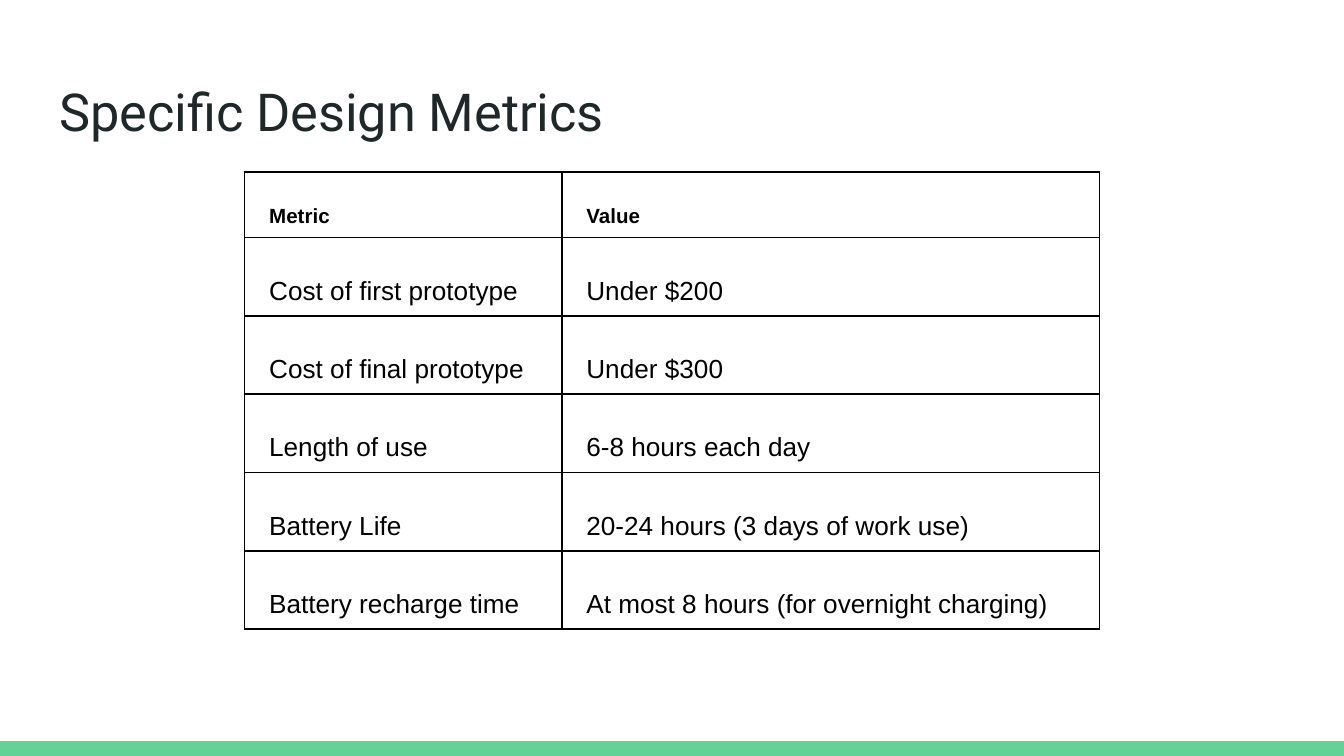
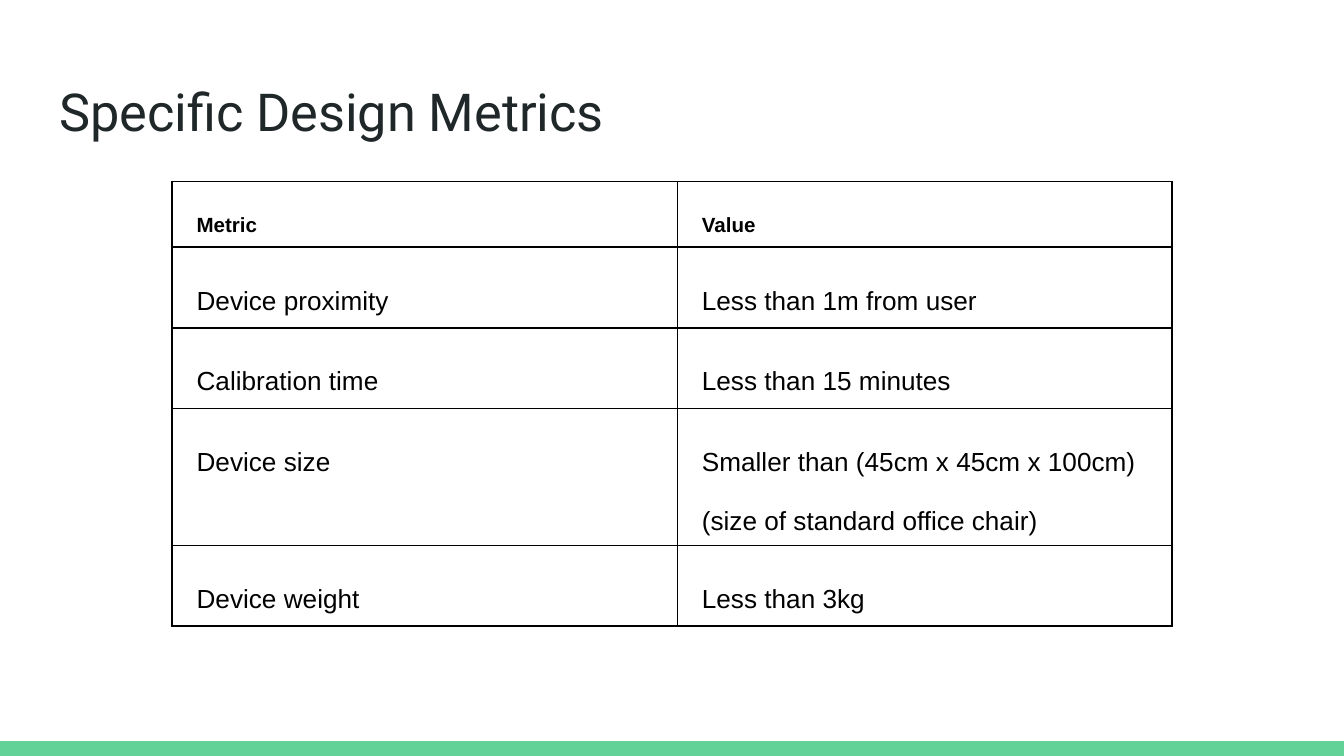
from lxml.etree import SubElement
from pptx import Presentation
from pptx.dml.color import RGBColor
from pptx.enum.shapes import MSO_SHAPE
from pptx.enum.text import MSO_ANCHOR, MSO_AUTO_SIZE, PP_ALIGN
from pptx.oxml import parse_xml
from pptx.oxml.ns import nsdecls, qn
from pptx.util import Inches, Pt

SLIDE_W = 10
SLIDE_H = SLIDE_W * 9 / 16
BAND_H = 0.11
MARGIN = 0.34
TITLE_BOX = (MARGIN, 0.49, SLIDE_W - 2 * MARGIN, 0.63)

GREEN = RGBColor(0x63, 0xD2, 0x97)
INK = RGBColor(0x20, 0x27, 0x29)
BLACK = RGBColor(0, 0, 0)
WHITE = RGBColor(0xFF, 0xFF, 0xFF)

TITLE = "Specific Design Metrics"
HEADINGS = ("Metric", "Value")
COST_AND_BATTERY = [
    ("Cost of first prototype", "Under $200"),
    ("Cost of final prototype", "Under $300"),
    ("Length of use", "6-8 hours each day"),
    ("Battery Life", "20-24 hours (3 days of work use)"),
    ("Battery recharge time", "At most 8 hours (for overnight charging)"),
]
DEVICE = [
    ("Device proximity", "Less than 1m from user"),
    ("Calibration time", "Less than 15 minutes"),
    ("Device size",
     "Smaller than (45cm x 45cm x 100cm)\n(size of standard office chair)"),
    ("Device weight", "Less than 3kg"),
]


def inches(box):
    return [Inches(length) for length in box]


def set_margins(area, margin):
    area.margin_left = area.margin_right = margin
    area.margin_top = area.margin_bottom = margin


def style_font(paragraph, name, size, color, bold=False):
    font = paragraph.font
    font.name, font.size, font.bold = name, Pt(size), bold
    font.color.rgb = color


def add_band(slide, box):
    band = slide.shapes.add_shape(MSO_SHAPE.RECTANGLE, *inches(box))
    band.shadow.inherit = False
    band.fill.solid()
    band.fill.fore_color.rgb = GREEN
    band.line.fill.background()


def place_title(slide, box):
    title = slide.shapes.title
    title.left, title.top, title.width, title.height = inches(box)
    frame = title.text_frame
    frame.text = TITLE
    frame.word_wrap = True
    frame.auto_size = MSO_AUTO_SIZE.NONE
    frame.vertical_anchor = MSO_ANCHOR.TOP
    set_margins(frame, Inches(0.1))
    heading = frame.paragraphs[0]
    heading.alignment = PP_ALIGN.LEFT
    style_font(heading, "Roboto", 28, INK)


def add_borders(cell):
    properties = cell._tc.get_or_add_tcPr()
    for position, side in enumerate("LRTB"):
        border = parse_xml(f'<a:ln{side} {nsdecls("a")} w="{Pt(1)}"/>')
        fill = SubElement(border, qn("a:solidFill"))
        SubElement(fill, qn("a:srgbClr"), val=str(BLACK))
        properties.insert(position, border)


def fill_cell(cell, text, heading):
    cell.text = text
    cell.fill.background()
    cell.vertical_anchor = MSO_ANCHOR.TOP
    set_margins(cell, Pt(5.25))
    add_borders(cell)
    for paragraph in cell.text_frame.paragraphs:
        paragraph.line_spacing = 2.0
        indent = paragraph._p.get_or_add_pPr()
        indent.set("marL", str(Inches(0.11)))
        indent.set("indent", "0")
        style_font(paragraph, "Arial", 11 if heading else 14, BLACK, heading)


def add_metrics(slide, box, metrics, metric_w, heading_h, row_h):
    """Table with a heading row; the value column takes the remaining width."""
    rows = [HEADINGS, *metrics]
    frame = slide.shapes.add_table(len(rows), len(HEADINGS), *inches(box))
    table = frame.table
    table.first_row = table.horz_banding = False
    for column, width in zip(table.columns, (metric_w, box[2] - metric_w)):
        column.width = Inches(width)
    for r, texts in enumerate(rows):
        table.rows[r].height = Inches(row_h if r else heading_h)
        for c, text in enumerate(texts):
            fill_cell(table.cell(r, c), text, heading=r == 0)
    frame.height = Inches(box[3])


def add_metrics_slide(prs, box, metrics, **grid):
    slide = prs.slides.add_slide(prs.slide_layouts[5])
    add_band(slide, (0, SLIDE_H - BAND_H, SLIDE_W, BAND_H))
    place_title(slide, TITLE_BOX)
    add_metrics(slide, box, metrics, **grid)


def main():
    prs = Presentation()
    prs.slide_width, prs.slide_height = Inches(SLIDE_W), Inches(SLIDE_H)
    background = prs.slide_master.background.fill
    background.solid()
    background.fore_color.rgb = WHITE

    # Cost and battery targets
    add_metrics_slide(prs, (1.82, 1.28, 6.36, 3.57), COST_AND_BATTERY,
                      metric_w=2.36, heading_h=0.48, row_h=0.48)
    # Device targets
    add_metrics_slide(prs, (1.28, 1.35, 7.44, 3.43), DEVICE,
                      metric_w=3.76, heading_h=0.49, row_h=0.6)
    prs.save("out.pptx")


if __name__ == "__main__":
    main()
